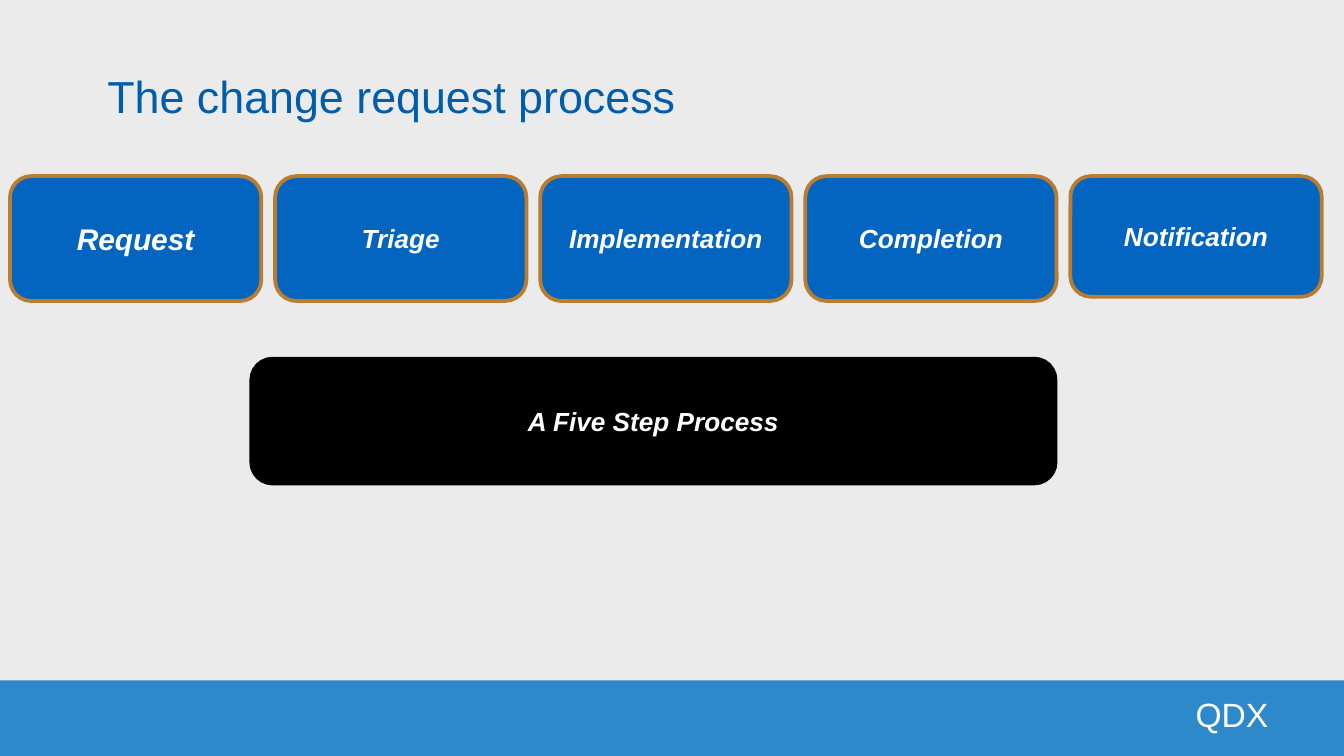
from dataclasses import dataclass

from pptx import Presentation
from pptx.dml.color import RGBColor as Rgb
from pptx.enum.shapes import MSO_SHAPE as Shape
from pptx.enum.text import MSO_ANCHOR as Anchor, PP_ALIGN as Align
from pptx.util import Cm, Pt


@dataclass(frozen=True)
class Theme:
    font: str = "Arial"
    background: str = "EBEBEB"
    footer: str = "2E89CA"
    title: str = "005DAB"
    step: str = "0365C0"
    step_edge: str = "BA7C2E"
    summary: str = "000000"
    light: str = "FFFFFF"
    title_size: int = 24
    footer_size: int = 18
    lead_size: int = 16
    label_size: int = 14
    edge_width: int = 2


def write(frame, text, *, font, size, color, align=Align.LEFT, bold=False,
          italic=False, inset=(0.25, 0.13)):
    frame.word_wrap = True
    frame.vertical_anchor = Anchor.MIDDLE
    frame.margin_left = frame.margin_right = Cm(inset[0])
    frame.margin_top = frame.margin_bottom = Cm(inset[1])
    para = frame.paragraphs[0]
    para.alignment = align
    span = para.add_run()
    span.text = text
    span.font.name = font
    span.font.size = Pt(size)
    span.font.bold = bold
    span.font.italic = italic
    span.font.color.rgb = Rgb.from_string(color)


class PageBuilder:
    def __init__(self, page, theme):
        self.page = page
        self.theme = theme
        fill = page.background.fill
        fill.solid()
        fill.fore_color.rgb = Rgb.from_string(theme.background)

    def panel(self, kind, area, fill, edge=None):
        box = self.page.shapes.add_shape(kind, *map(Cm, area))
        box.shadow.inherit = False
        box.fill.solid()
        box.fill.fore_color.rgb = Rgb.from_string(fill)
        if edge:
            box.line.color.rgb = Rgb.from_string(edge)
            box.line.width = Pt(self.theme.edge_width)
        else:
            box.line.fill.background()
        return box

    def card(self, text, area, fill, edge, size):
        box = self.panel(Shape.ROUNDED_RECTANGLE, area, fill, edge)
        box.adjustments[0] = 0.17
        write(box.text_frame, text, font=self.theme.font, size=size,
              color=self.theme.light, align=Align.CENTER, bold=True, italic=True)

    def label(self, text, area, **style):
        box = self.page.shapes.add_textbox(*map(Cm, area))
        write(box.text_frame, text, font=self.theme.font, **style)


def main():
    theme = Theme()
    deck = Presentation()
    deck.slide_width, deck.slide_height = Cm(25.4), Cm(14.29)
    builder = PageBuilder(deck.slides.add_slide(deck.slide_layouts[6]), theme)

    builder.panel(Shape.RECTANGLE, (0, 12.86, 25.4, 1.43), theme.footer)
    builder.label("QDX", (16.4, 13.11, 7.57, 0.79), size=theme.footer_size,
                  color=theme.light, align=Align.RIGHT, inset=(0, 0))
    builder.label("The change request process", (1.78, 1.17, 20.93, 1.27),
                  size=theme.title_size, color=theme.title)

    left, top, width, height, pitch = 0.19, 3.33, 4.75, 2.36, 5.01
    steps = ["Request", "Triage", "Implementation", "Completion", "Notification"]
    for index, step in enumerate(steps):
        is_first, is_last = index == 0, index == len(steps) - 1
        builder.card(step,
                     (left + index * pitch, top, width, 2.28 if is_last else height),
                     theme.step, theme.step_edge,
                     theme.lead_size if is_first else theme.label_size)

    builder.card("A Five Step Process", (4.75, 6.78, 15.2, height),
                 theme.summary, theme.summary, theme.label_size)

    deck.save("out.pptx")


if __name__ == "__main__":
    main()
